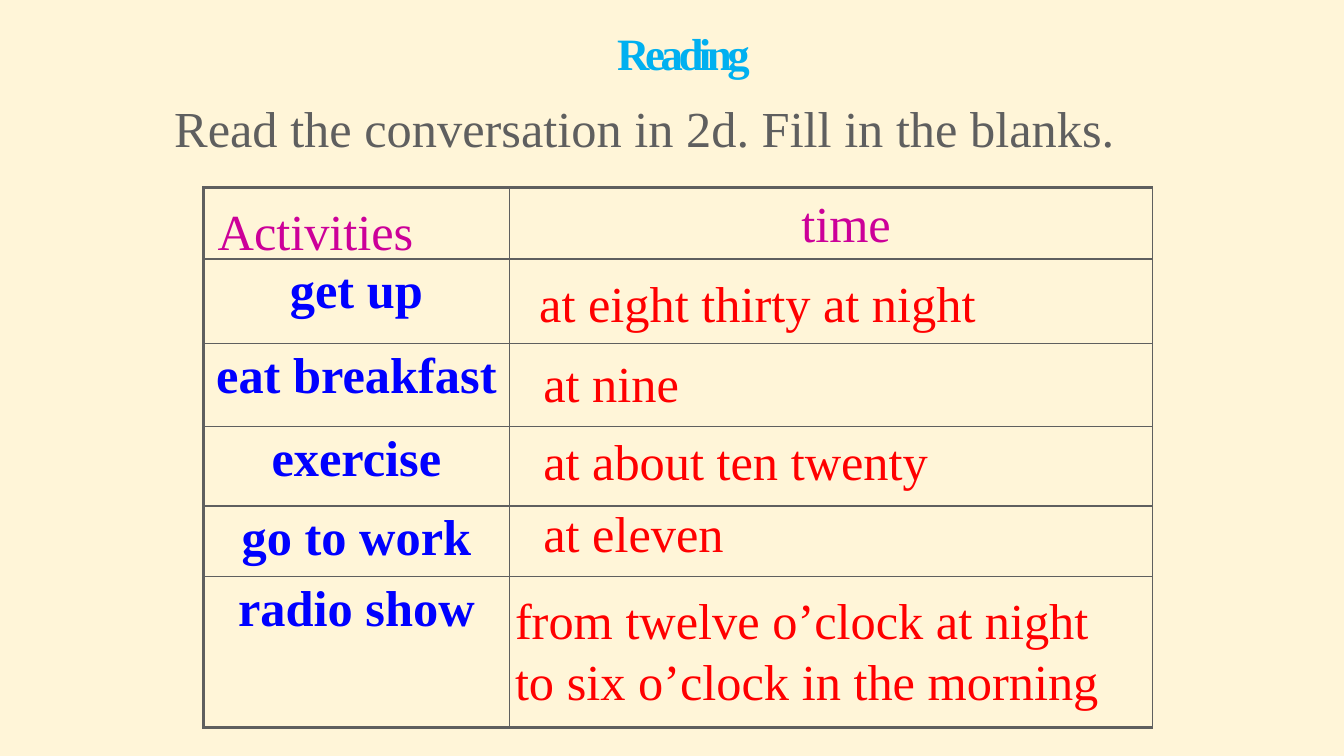
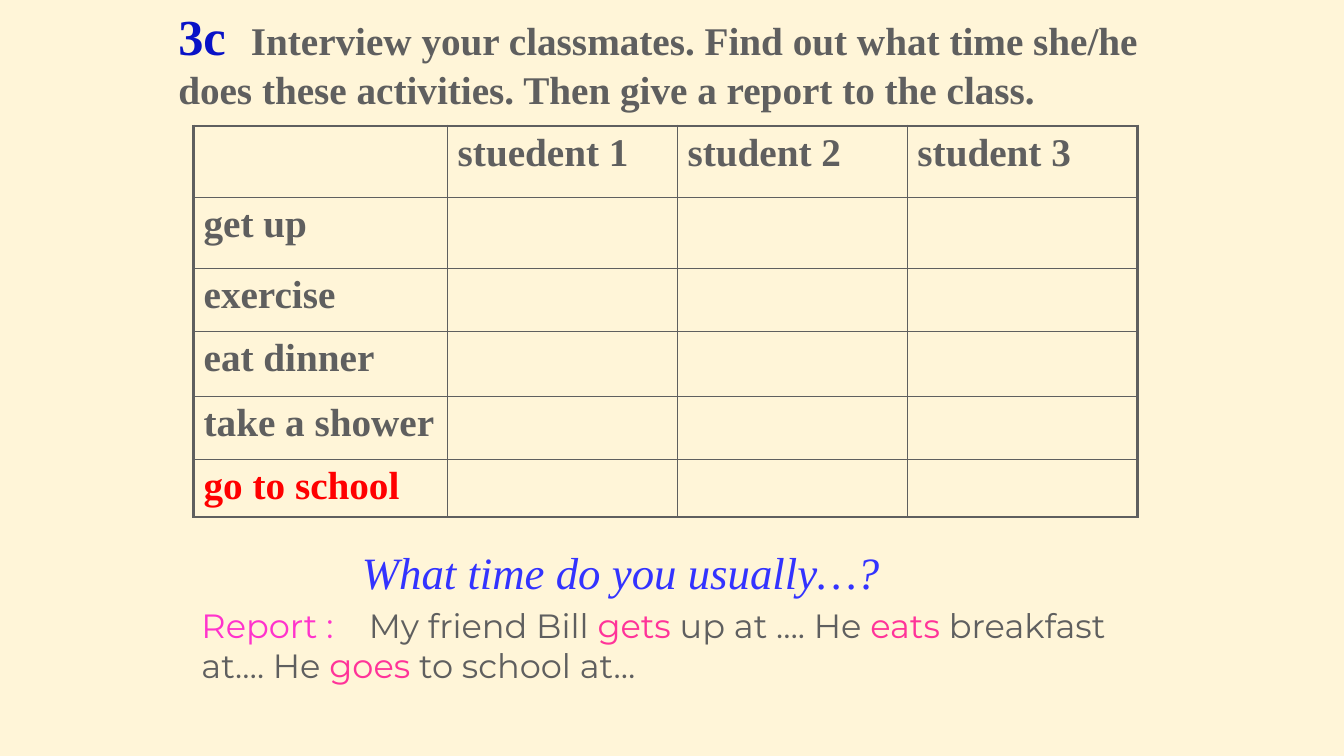
from dataclasses import dataclass

from lxml.etree import SubElement as Sub
from pptx import Presentation
from pptx.dml.color import RGBColor as Rgb
from pptx.enum.text import PP_ALIGN as Align
from pptx.oxml import parse_xml
from pptx.oxml.ns import nsdecls, qn
from pptx.util import Inches, Pt


@dataclass(frozen=True)
class Theme:
    serif: str = "Times New Roman"
    sans: str = "Montserrat"
    paper: str = "FFF5D8"
    grey: str = "5F5F5F"
    sky: str = "00B0F0"
    navy: str = "000099"
    royal: str = "0912C7"
    blue: str = "0000FF"
    iris: str = "3333FF"
    plum: str = "CC0099"
    red: str = "FF0000"
    pink: str = "FF33CC"
    rose: str = "FF3399"
    big: int = 36
    head: int = 32
    mid: int = 28
    small: int = 24
    thin: float = 1
    thick: float = 2.25


T = Theme()


def line(tag, width, color):
    """Build a solid line element for a cell edge or a text outline."""
    return parse_xml(
        f'<a:{tag} {nsdecls("a")} w="{Pt(width)}"><a:solidFill>'
        f'<a:srgbClr val="{color}"/></a:solidFill></a:{tag}>')


def write(frame, parts, align=Align.LEFT, tab=None, **base):
    """Fill a frame with one paragraph; parts is a string or (string, format) pairs."""
    para = frame.paragraphs[0]
    para.alignment = align
    if tab:
        stops = Sub(para._p.get_or_add_pPr(), qn("a:tabLst"))
        Sub(stops, qn("a:tab"), pos=str(Inches(tab)), algn="l")
    for words, extra in [(parts, {})] if isinstance(parts, str) else parts:
        look = {"face": T.serif, "size": T.big, "color": T.grey} | base | extra
        run = para.add_run()
        run.text = words
        font = run.font
        font.name, font.size = look["face"], Pt(look["size"])
        font.color.rgb = Rgb.from_string(look["color"])
        font.bold, font.italic = look.get("bold", False), look.get("italic", False)
        props = run._r.get_or_add_rPr()
        if "track" in look:
            props.set("spc", str(round(look["track"] * 100)))
        if "edge" in look:
            props.insert(0, line("ln", T.thin, look["edge"]))


def text(slide, box, parts, **look):
    """Place a wrapping text box."""
    frame = slide.shapes.add_textbox(*map(Inches, box)).text_frame
    frame.word_wrap = True
    write(frame, parts, **look)


def grid(slide, left, top, cols, rows, right=T.thick):
    """Place an unfilled table with thin inner lines and a thick frame."""
    table = slide.shapes.add_table(
        len(rows), len(cols), Inches(left), Inches(top),
        Inches(sum(cols)), Inches(sum(rows))).table
    table.first_row = table.horz_banding = False
    for col, width in zip(table.columns, cols):
        col.width = Inches(width)
    for row, height in zip(table.rows, rows):
        row.height = Inches(height)
    for r in range(len(rows)):
        for c in range(len(cols)):
            cell = table.cell(r, c)
            cell.fill.background()
            edges = {
                "lnL": T.thick if c == 0 else T.thin,
                "lnR": right if c == len(cols) - 1 else T.thin,
                "lnT": T.thick if r == 0 else T.thin,
                "lnB": T.thick if r == len(rows) - 1 else T.thin,
            }
            props = cell._tc.get_or_add_tcPr()
            for i, (tag, width) in enumerate(edges.items()):
                props.insert(i, line(tag, width, T.grey))
    return table


def times(slide, left, top):
    """Activity table with the answers laid over its right column."""
    table = grid(slide, left, top, [3.03, 6.38],
                 [0.71, 0.84, 0.82, 0.79, 0.7, 1.5], right=T.thin)
    acts = ["get up", "eat breakfast", "exercise", "go to work", "radio show"]
    for r, act in enumerate(acts, 1):
        write(table.cell(r, 0).text_frame, act, align=Align.CENTER,
              color=T.blue, bold=True)

    # Column heads
    text(slide, (left + 0.04, top + 0.08, 2.52, 0.7), "Activities", color=T.plum)
    text(slide, (left + 5.83, top, 1.2, 0.7), "time", color=T.plum)

    # Answers: offset from the table corner, size, words
    answers = [
        (3.23, 0.79, 5.16, 0.7, "at eight thirty at night"),
        (3.27, 1.58, 2.05, 0.7, "at nine"),
        (3.27, 2.36, 5, 0.7, "at about ten twenty"),
        (3.27, 3.07, 2.42, 0.7, "at eleven"),
        (2.99, 3.94, 6.3, 1.3,
         "from twelve o’clock at night to six o’clock in the morning"),
    ]
    for x, y, w, h, words in answers:
        text(slide, (left + x, top + y, w, h), words, color=T.red)


def survey(slide, left, top):
    """Blank interview table for three students."""
    table = grid(slide, left, top, [2.52] + [2.28] * 3,
                 [0.71, 0.7, 0.63, 0.64, 0.63, 0.57])
    look = {"size": T.mid, "bold": True}
    for c, name in enumerate(["stuedent 1", "student 2", "student 3"], 1):
        write(table.cell(0, c).text_frame, name, **look)
    acts = ["get up", "exercise", "eat dinner", "take a shower", "go to school"]
    for r, act in enumerate(acts, 1):
        color = T.red if r == len(acts) else T.grey
        write(table.cell(r, 0).text_frame, act, color=color, **look)


def reading(slide):
    """Reading task: title, prompt and table."""
    text(slide, (5.01, 0.21, 3.54, 0.79), "Reading", align=Align.CENTER,
         size=T.head, color=T.sky, bold=True, track=-3.2, edge=T.navy)
    text(slide, (1.63, 0.91, 10, 0.7),
         "Read the conversation in 2d. Fill in the blanks.")
    times(slide, 2.02, 1.86)


def interview(slide):
    """Interview task: prompt, table, question and report."""
    text(slide, (1.67, 0, 10, 1.17), [
        ("3c", {"size": T.big, "color": T.royal}),
        ("\tInterview your classmates. Find out what time she/he does these "
         "activities. Then give a report to the class.", {}),
    ], size=T.mid, bold=True, tab=0.72)
    survey(slide, 1.92, 1.25)

    # Model question and report
    text(slide, (3.49, 5.36, 5.5, 0.63), "What time do you usually…?",
         size=T.head, color=T.iris, italic=True)
    verb = {"color": T.rose}
    text(slide, (1.9, 5.95, 9.42, 0.94), [
        ("Report :", {"color": T.pink}),
        ("\tMy friend Bill ", {}), ("gets", verb),
        (" up at …. He", {}), (" eats", verb),
        (" breakfast at…. He ", {}), ("goes", verb),
        (" to school at…", {}),
    ], face=T.sans, size=T.small, tab=1.66)


def main():
    deck = Presentation()
    deck.slide_width, deck.slide_height = Inches(13.33), Inches(7.5)
    fill = deck.slide_master.background.fill
    fill.solid()
    fill.fore_color.rgb = Rgb.from_string(T.paper)
    for build in (reading, interview):
        build(deck.slides.add_slide(deck.slide_layouts[6]))
    deck.save("out.pptx")


if __name__ == "__main__":
    main()
